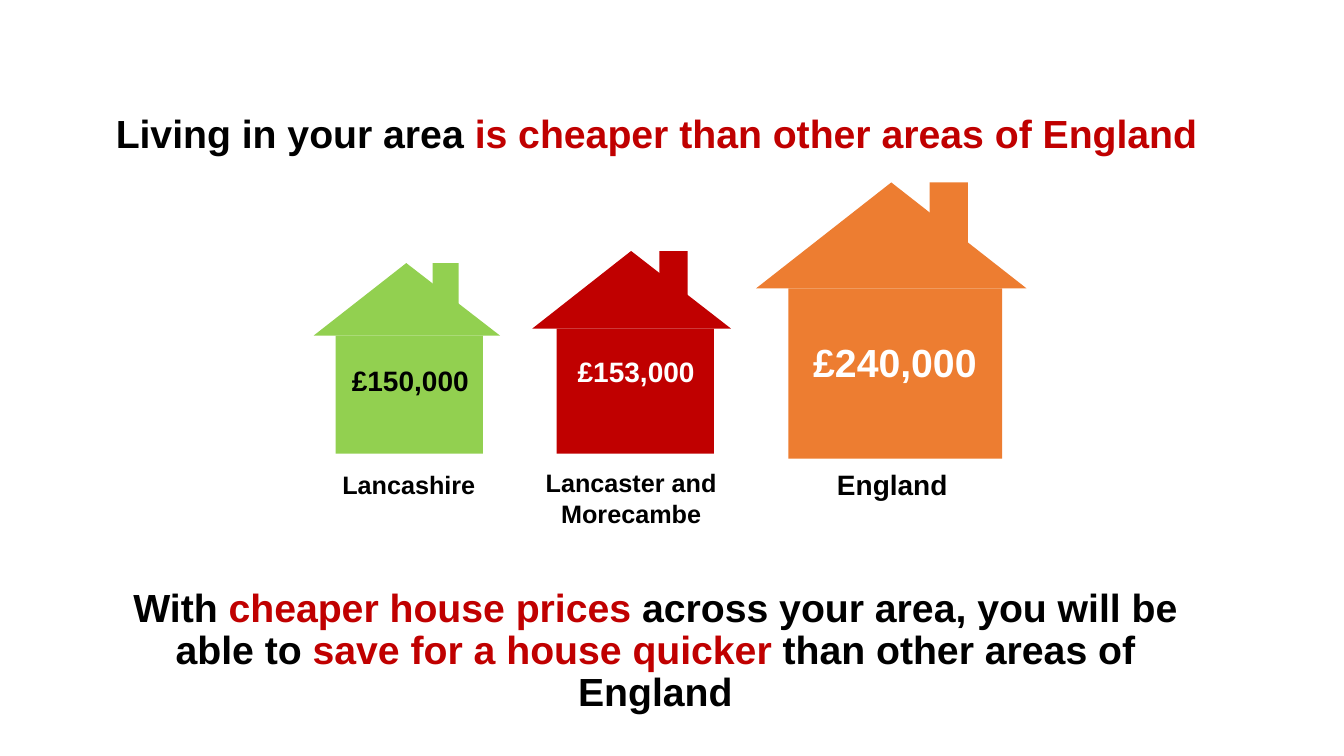
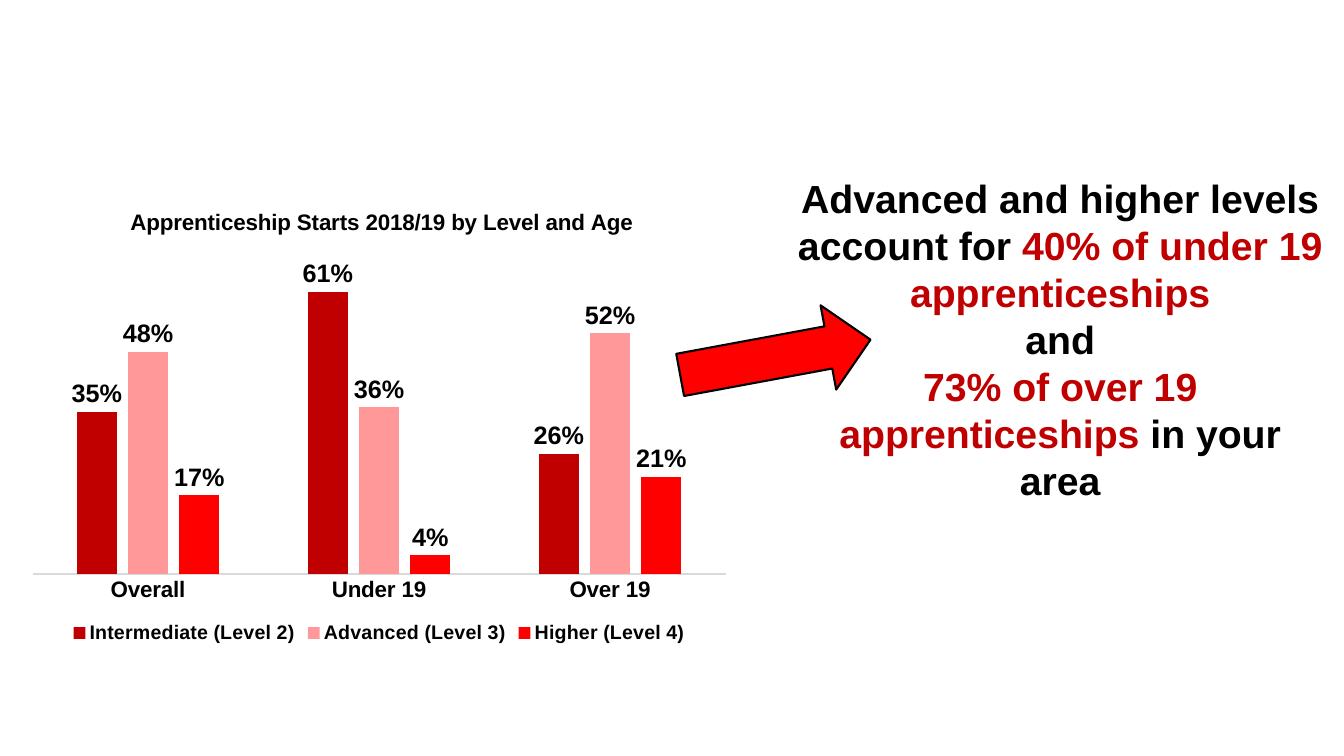
from dataclasses import dataclass

from lxml.etree import SubElement
from pptx import Presentation
from pptx.chart.data import CategoryChartData
from pptx.dml.color import RGBColor
from pptx.enum.chart import XL_CHART_TYPE as Kind, XL_LABEL_POSITION as Spot
from pptx.enum.chart import XL_LEGEND_POSITION as Side, XL_TICK_MARK as Tick
from pptx.enum.shapes import MSO_SHAPE as Form
from pptx.enum.text import MSO_ANCHOR as Anchor, PP_ALIGN as Align
from pptx.oxml.ns import qn
from pptx.util import Emu, Pt

PX = 9144  # EMU per px, 100 px to the inch


@dataclass(frozen=True)
class Theme:
    face: str = "Arial"
    black: str = "000000"
    white: str = "FFFFFF"
    deep: str = "C00000"
    red: str = "FF0000"
    pink: str = "FF9999"
    green: str = "92D050"
    orange: str = "ED7D31"
    rule: str = "D9D9D9"
    head: int = 28
    large: int = 20
    label: int = 18
    axis: int = 16
    key: int = 14


T = Theme()
Box = tuple[int, int, int, int]
Line = list[tuple[str, str]]  # (text, colour) runs of one paragraph


@dataclass(frozen=True)
class House:
    x: int
    y: int
    width: int
    fill: str
    price: str
    price_at: Box
    price_size: int
    ink: str
    place: str
    place_at: Box
    place_size: int


@dataclass(frozen=True)
class Series:
    name: str
    values: tuple[float, ...]
    fill: str


HOUSES = [
    House(311, 261, 185, T.green, "£150,000", (322, 356, 170, 44), T.large, T.black,
          "Lancashire", (307, 461, 197, 40), T.label),
    House(528, 249, 197, T.deep, "£153,000", (546, 347, 170, 44), T.large, T.white,
          "Lancaster and Morecambe", (524, 459, 204, 71), T.label),
    House(750, 181, 268, T.orange, "£240,000", (792, 331, 191, 57), T.head, T.white,
          "England", (792, 459, 186, 44), T.large),
]
AGES = ("Overall", "Under 19", "Over 19")
LEVELS = [
    Series("Intermediate (Level 2)", (0.35, 0.61, 0.26), T.deep),
    Series("Advanced (Level 3)", (0.48, 0.36, 0.52), T.pink),
    Series("Higher (Level 4)", (0.17, 0.04, 0.21), T.red),
]


def rgb(hue: str) -> RGBColor:
    return RGBColor.from_string(hue)


def emu(box: Box) -> list[Emu]:
    return [Emu(n * PX) for n in box]


def style(font, size: int, hue: str = T.black) -> None:
    font.name, font.size, font.bold = T.face, Pt(size), True
    font.color.rgb = rgb(hue)


def write(slide, box: Box, lines: list[Line], *, size: int = T.head,
          align=Align.CENTER, anchor=Anchor.TOP, lead: float = 1.0) -> None:
    frame = slide.shapes.add_textbox(*emu(box)).text_frame
    frame.word_wrap, frame.vertical_anchor = True, anchor
    for i, line in enumerate(lines):
        para = frame.add_paragraph() if i else frame.paragraphs[0]
        para.alignment, para.line_spacing = align, lead
        for text, hue in line:
            run = para.add_run()
            run.text = text
            style(run.font, size, hue)


def paint(shape, fill: str, edge: str | None = None, weight: float = 0) -> None:
    shape.shadow.inherit = False
    shape.fill.solid()
    shape.fill.fore_color.rgb = rgb(fill)
    if edge:
        shape.line.color.rgb = rgb(edge)
        shape.line.width = Pt(weight)
    else:
        shape.line.fill.background()


def draw_house(slide, house: House) -> None:
    def part(share: float) -> int:
        return round(house.width * share)

    x, y, eaves = house.x, house.y, house.y + part(0.39)
    group = slide.shapes.add_group_shape().shapes
    # Wall and chimney
    for box in ((x + part(0.12), eaves, part(0.79), part(0.63)),
                (x + part(0.64), y, part(0.14), part(0.26))):
        paint(group.add_shape(Form.RECTANGLE, *emu(box)), house.fill)
    # Roof
    roof = group.build_freeform(x + part(0.5), y, scale=PX)
    roof.add_line_segments([(x, eaves), (x + house.width, eaves)], close=True)
    paint(roof.convert_to_shape(), house.fill)
    # Price and place
    write(slide, house.price_at, [[(house.price, house.ink)]], size=house.price_size)
    write(slide, house.place_at, [[(house.place, T.black)]], size=house.place_size)


def place(node, **parts: float) -> None:
    """Fix the place of a chart part, in shares of the chart."""
    spot = node.find(qn("c:layout"))
    if spot is None:
        spot = node.makeelement(qn("c:layout"))
        node.insert(0, spot)
    hold = SubElement(spot, qn("c:manualLayout"))
    if "w" in parts:
        SubElement(hold, qn("c:layoutTarget")).set("val", "inner")
    for mode in ("xMode", "yMode"):
        SubElement(hold, qn(f"c:{mode}")).set("val", "edge")
    for name, share in parts.items():
        SubElement(hold, qn(f"c:{name}")).set("val", str(share))


def draw_chart(slide, box: Box) -> None:
    data = CategoryChartData(number_format="0%")
    data.categories = AGES
    for level in LEVELS:
        data.add_series(level.name, level.values)
    chart = slide.shapes.add_chart(Kind.COLUMN_CLUSTERED, *emu(box), data).chart
    style(chart.font, T.axis)

    # Title
    chart.has_title = True
    title = chart.chart_title
    title.text_frame.text = "Apprenticeship Starts 2018/19 by Level and Age"
    style(title.text_frame.paragraphs[0].runs[0].font, T.axis)
    place(title._element, x=0.15, y=0.04)
    place(chart._chartSpace.find(".//" + qn("c:plotArea")),
          x=0.02, y=0.14, w=0.96, h=0.7)

    # Axes and legend
    ages, share = chart.category_axis, chart.value_axis
    ages.major_tick_mark = ages.minor_tick_mark = Tick.NONE
    ages.format.line.color.rgb = rgb(T.rule)
    ages.format.line.width = Pt(0.75)
    style(ages.tick_labels.font, T.axis)
    share.visible = share.has_major_gridlines = False
    share.minimum_scale, share.maximum_scale = 0, 0.7
    chart.has_legend = True
    chart.legend.position = Side.BOTTOM
    chart.legend.include_in_layout = False
    style(chart.legend.font, T.key)

    # Columns
    plot = chart.plots[0]
    plot.gap_width, plot.overlap, plot.vary_by_categories = 219, -27, False
    for level, bars in zip(LEVELS, plot.series):
        bars.format.fill.solid()
        bars.format.fill.fore_color.rgb = rgb(level.fill)
        bars.invert_if_negative = False
        tags = bars.data_labels
        tags.show_value, tags.position = True, Spot.OUTSIDE_END
        tags.number_format, tags.number_format_is_linked = "0%", False
        style(tags.font, T.label)


def prices(slide) -> None:
    write(slide, (105, 94, 1150, 81),
          [[("Living in your area ", T.black),
            ("is cheaper than other areas of England", T.deep)]],
          align=Align.LEFT, anchor=Anchor.MIDDLE, lead=0.9)
    for house in HOUSES:
        draw_house(slide, house)
    write(slide, (112, 606, 1076, 81),
          [[("With ", T.black), ("cheaper house prices ", T.deep),
            ("across your area, you will be able to ", T.black),
            ("save for a house quicker", T.deep),
            (" than other areas of England", T.black)]],
          anchor=Anchor.MIDDLE, lead=0.9)


def starts(slide) -> None:
    write(slide, (780, 168, 543, 340),
          [[("Advanced and higher levels account for ", T.black),
            ("40% of under 19 apprenticeships", T.deep)],
           [("and", T.black)],
           [("73% of over 19 apprenticeships", T.deep), (" in your area", T.black)]])
    arrow = slide.shapes.add_shape(Form.RIGHT_ARROW, *emu((673, 312, 192, 85)))
    arrow.rotation = 349.5
    paint(arrow, T.red, T.black, 1.5)
    draw_chart(slide, (18, 184, 716, 459))


def main() -> None:
    deck = Presentation()
    deck.slide_width, deck.slide_height = Emu(1333 * PX), Emu(750 * PX)
    for build in (prices, starts):
        build(deck.slides.add_slide(deck.slide_layouts[6]))
    deck.save("out.pptx")


if __name__ == "__main__":
    main()
